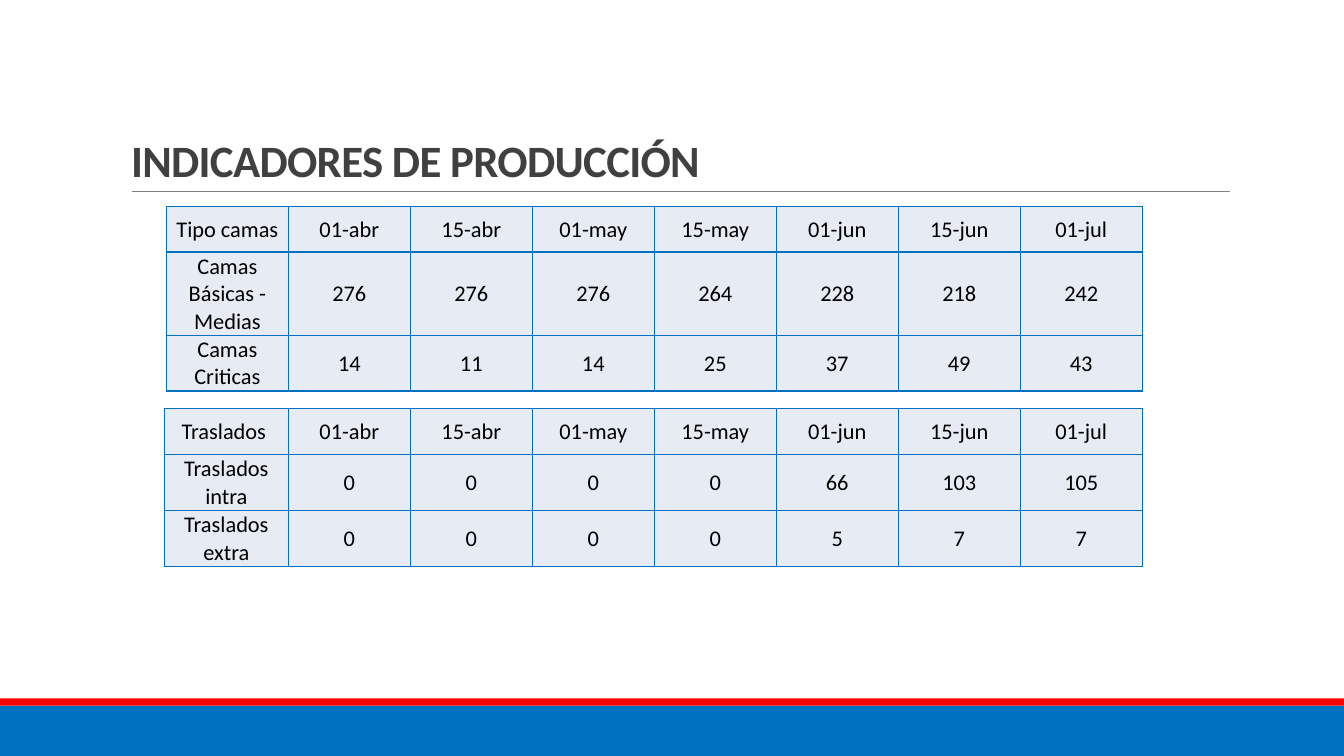
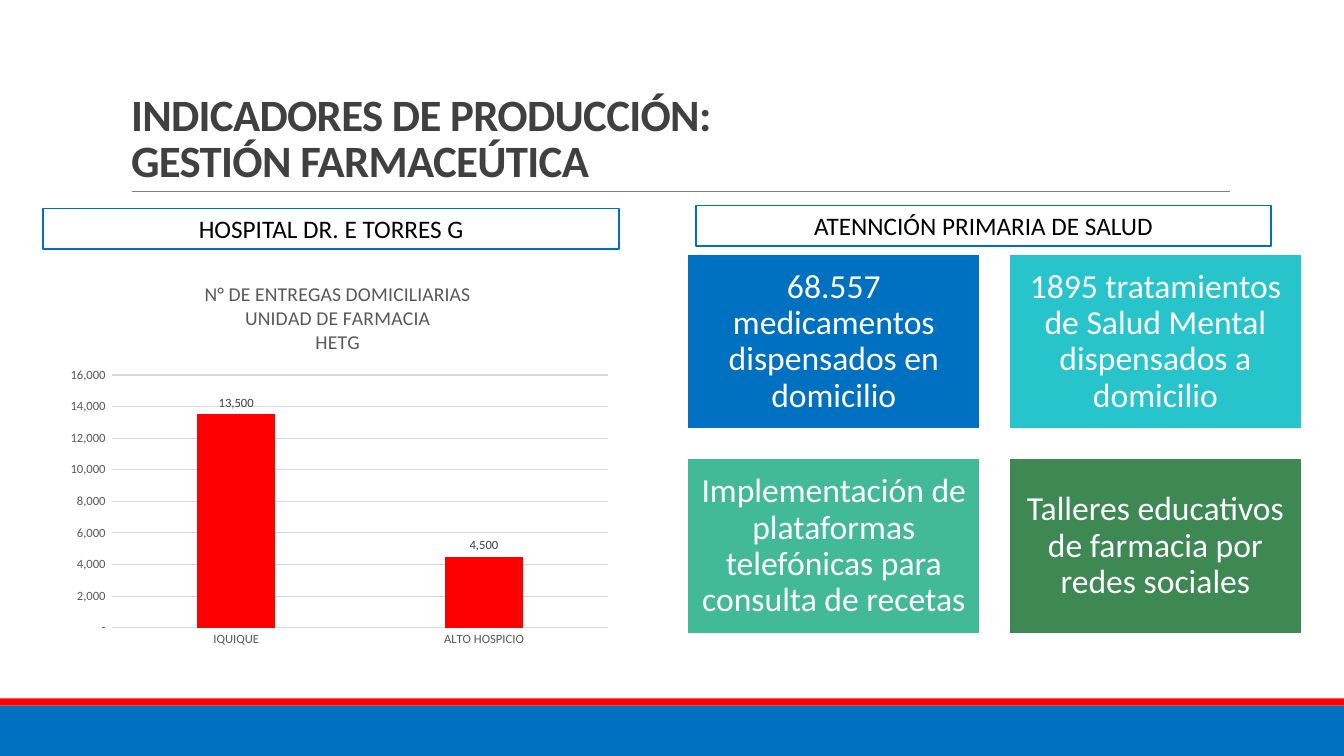
from dataclasses import dataclass

from pptx import Presentation
from pptx import util as u
from pptx.chart import data
from pptx.dml import color
from pptx.enum import chart as ch
from pptx.enum import shapes, text
from pptx.oxml import parse_xml
from pptx.oxml.ns import nsdecls

PX = 9144
FONT = "Calibri"
WIDE, HIGH = 1333, 750
HUE = {
    "blue": "0070C0", "red": "FF0000", "white": "FFFFFF", "black": "000000",
    "title": "404040", "rule": "808080", "cell": "E7EBF4", "grid": "D9D9D9",
    "label": "595959", "aqua": "28C4CC", "mint": "42BA97", "green": "3E8853",
}
NUM = '_-* #,##0_-;\\-* #,##0_-;_-* "-"_-;_-@_-'
DATES = ["01-abr", "15-abr", "01-may", "15-may", "01-jun", "15-jun", "01-jul"]


@dataclass
class Box:
    """A filled rectangle, with an optional outline and centred text."""
    x: int
    y: int
    w: int
    h: int
    fill: str
    line: str = ""
    words: str = ""
    size: int = 18
    ink: str = "black"
    lead: float = 1.0
    pad: int = 10


@dataclass
class Grid:
    """A table: its place, first column width, row heights and rows."""
    x: int
    y: int
    first: int
    highs: list[int]
    rows: list[list]


BANDS = [Box(0, 700, WIDE, 50, "blue"), Box(0, 693, WIDE, 7, "red")]
GRIDS = [
    Grid(165, 205, 121, [45, 82, 55], [
        ["Tipo camas", *DATES],
        ["Camas Básicas - Medias", 276, 276, 276, 264, 228, 218, 242],
        ["Camas Criticas", 14, 11, 14, 25, 37, 49, 43],
    ]),
    Grid(163, 405, 123, [46, 55, 55], [
        ["Traslados ", *DATES],
        ["Traslados intra", 0, 0, 0, 0, 66, 103, 105],
        ["Traslados extra", 0, 0, 0, 0, 5, 7, 7],
    ]),
]
HEADS = [
    Box(43, 207, 571, 40, "white", "blue", "HOSPITAL DR. E TORRES G", pad=5),
    Box(690, 204, 571, 40, "white", "blue", "ATENNCIÓN PRIMARIA DE SALUD", pad=5),
]
FACTS = [
    ("blue", "68.557 medicamentos dispensados en domicilio"),
    ("aqua", "1895 tratamientos de Salud Mental dispensados a domicilio"),
    ("mint", "Implementación de plataformas telefónicas para consulta de recetas"),
    ("green", "Talleres educativos de farmacia por redes sociales"),
]
CARDS = [
    Box(682 + i % 2 * 319, 252 + i // 2 * 203, 290, 174, hue, "white", words,
        size=24, ink="white", lead=0.9)
    for i, (hue, words) in enumerate(FACTS)
]


def px(*sides: int) -> list[int]:
    """Turn pixel lengths into EMU."""
    return [side * PX for side in sides]


def rgb(name: str) -> color.RGBColor:
    """Look up a colour by name."""
    return color.RGBColor.from_string(HUE[name])


def style(font, size: int, ink: str, bold: bool = False) -> None:
    """Set face, size, colour and weight."""
    font.name, font.size, font.bold = FONT, u.Pt(size), bold
    font.color.rgb = rgb(ink)


def stroke(line, hue: str, width: float) -> None:
    """Set colour and width of a line."""
    line.color.rgb = rgb(hue)
    line.width = u.Pt(width)


def write(para, words: str, size: int, ink: str) -> None:
    """Add one centred run to a paragraph."""
    para.alignment = text.PP_ALIGN.CENTER
    run = para.add_run()
    run.text = words
    style(run.font, size, ink)


def draw_box(slide, box: Box) -> None:
    """Draw a rectangle with its text."""
    shape = slide.shapes.add_shape(shapes.MSO_SHAPE.RECTANGLE,
                                   *px(box.x, box.y, box.w, box.h))
    shape.shadow.inherit = False
    shape.fill.solid()
    shape.fill.fore_color.rgb = rgb(box.fill)
    if box.line:
        stroke(shape.line, box.line, 1.25)
    else:
        shape.line.fill.background()
    if box.words:
        frame = shape.text_frame
        frame.word_wrap = True
        frame.vertical_anchor = text.MSO_ANCHOR.MIDDLE
        frame.margin_left = frame.margin_right = box.pad * PX
        frame.margin_top = frame.margin_bottom = box.pad * PX
        para = frame.paragraphs[0]
        para.line_spacing = box.lead
        write(para, box.words, box.size, box.ink)


def new_slide(deck, *lines: str):
    """Add a slide with bands, rule and title."""
    slide = deck.slides.add_slide(deck.slide_layouts[5])
    for band in BANDS:
        draw_box(slide, band)
    rule = slide.shapes.add_connector(shapes.MSO_CONNECTOR.STRAIGHT,
                                      *px(131, 190, 1220, 190))
    stroke(rule.line, "rule", 0.5)
    rule._element.spPr.append(parse_xml(f"<a:effectLst {nsdecls('a')}/>"))
    title = slide.shapes.title
    title.left, title.top, title.width, title.height = px(120, 31, 1100, 159)
    frame = title.text_frame
    frame.auto_size = text.MSO_AUTO_SIZE.NONE
    frame.word_wrap = True
    frame.vertical_anchor = text.MSO_ANCHOR.BOTTOM
    para = frame.paragraphs[0]
    para.alignment = text.PP_ALIGN.LEFT
    para.line_spacing = 0.85
    for i, line in enumerate(lines):
        if i:
            para.add_line_break()
        run = para.add_run()
        run.text = line
        style(run.font, 32, "title", True)
        run._r.get_or_add_rPr().set("spc", "-50")
    return slide


def draw_cell(cell, words: str) -> None:
    """Fill, border and label a table cell."""
    props = cell._tc.get_or_add_tcPr()
    for side in "LRTB":
        props.append(parse_xml(
            f'<a:ln{side} {nsdecls("a")} w="12700"><a:solidFill>'
            f'<a:srgbClr val="{HUE["blue"]}"/></a:solidFill></a:ln{side}>'))
    cell.fill.solid()
    cell.fill.fore_color.rgb = rgb("cell")
    cell.vertical_anchor = text.MSO_ANCHOR.MIDDLE
    cell.margin_left = cell.margin_right = cell.margin_top = PX
    cell.margin_bottom = 0
    write(cell.text_frame.paragraphs[0], words, 16, "black")


def draw_grid(slide, grid: Grid) -> None:
    """Draw a table."""
    wides = [grid.first] + [121] * len(DATES)
    table = slide.shapes.add_table(
        len(grid.rows), len(wides),
        *px(grid.x, grid.y, sum(wides), sum(grid.highs))).table
    table.first_row = table.horz_banding = False
    for col, wide in zip(table.columns, wides):
        col.width = wide * PX
    for row, high, words in zip(table.rows, grid.highs, grid.rows):
        row.height = high * PX
        for cell, word in zip(row.cells, words):
            draw_cell(cell, str(word))


def draw_chart(slide) -> None:
    """Draw the column chart of home deliveries."""
    feed = data.CategoryChartData(number_format=NUM)
    feed.categories = ["IQUIQUE", "ALTO HOSPICIO"]
    feed.add_series("Series 1", [13500, 4500])
    chart = slide.shapes.add_chart(ch.XL_CHART_TYPE.COLUMN_CLUSTERED,
                                   *px(56, 262, 558, 387), feed).chart
    style(chart.font, 10, "black")
    chart.has_legend = False
    chart.has_title = True
    frame = chart.chart_title.text_frame
    for i, line in enumerate(["N° DE ENTREGAS DOMICILIARIAS",
                              "UNIDAD DE FARMACIA", "HETG"]):
        para = frame.add_paragraph() if i else frame.paragraphs[0]
        write(para, line, 14, "label")
    plot = chart.plots[0]
    plot.gap_width, plot.overlap = 219, -27
    plot.vary_by_categories = False
    bars = plot.series[0]
    bars.format.fill.solid()
    bars.format.fill.fore_color.rgb = rgb("red")
    tags = bars.data_labels
    tags.show_value = True
    tags.position = ch.XL_LABEL_POSITION.OUTSIDE_END
    tags.number_format, tags.number_format_is_linked = NUM, False
    style(tags.font, 9, "title")
    cats, vals = chart.category_axis, chart.value_axis
    for axis in (cats, vals):
        axis.major_tick_mark = axis.minor_tick_mark = ch.XL_TICK_MARK.NONE
        style(axis.tick_labels.font, 9, "label")
    stroke(cats.format.line, "grid", 0.75)
    vals.format.line.fill.background()
    stroke(vals.major_gridlines.format.line, "grid", 0.75)
    vals.minimum_scale, vals.maximum_scale, vals.major_unit = 0, 16000, 2000
    vals.tick_labels.number_format = NUM
    vals.tick_labels.number_format_is_linked = False


def main() -> None:
    """Build and save the deck."""
    deck = Presentation()
    deck.slide_width, deck.slide_height = px(WIDE, HIGH)
    slide = new_slide(deck, "INDICADORES DE PRODUCCIÓN")
    for grid in GRIDS:
        draw_grid(slide, grid)
    slide = new_slide(deck, "INDICADORES DE PRODUCCIÓN:", "GESTIÓN FARMACEÚTICA")
    draw_chart(slide)
    for box in HEADS + CARDS:
        draw_box(slide, box)
    deck.save("out.pptx")


if __name__ == "__main__":
    main()
